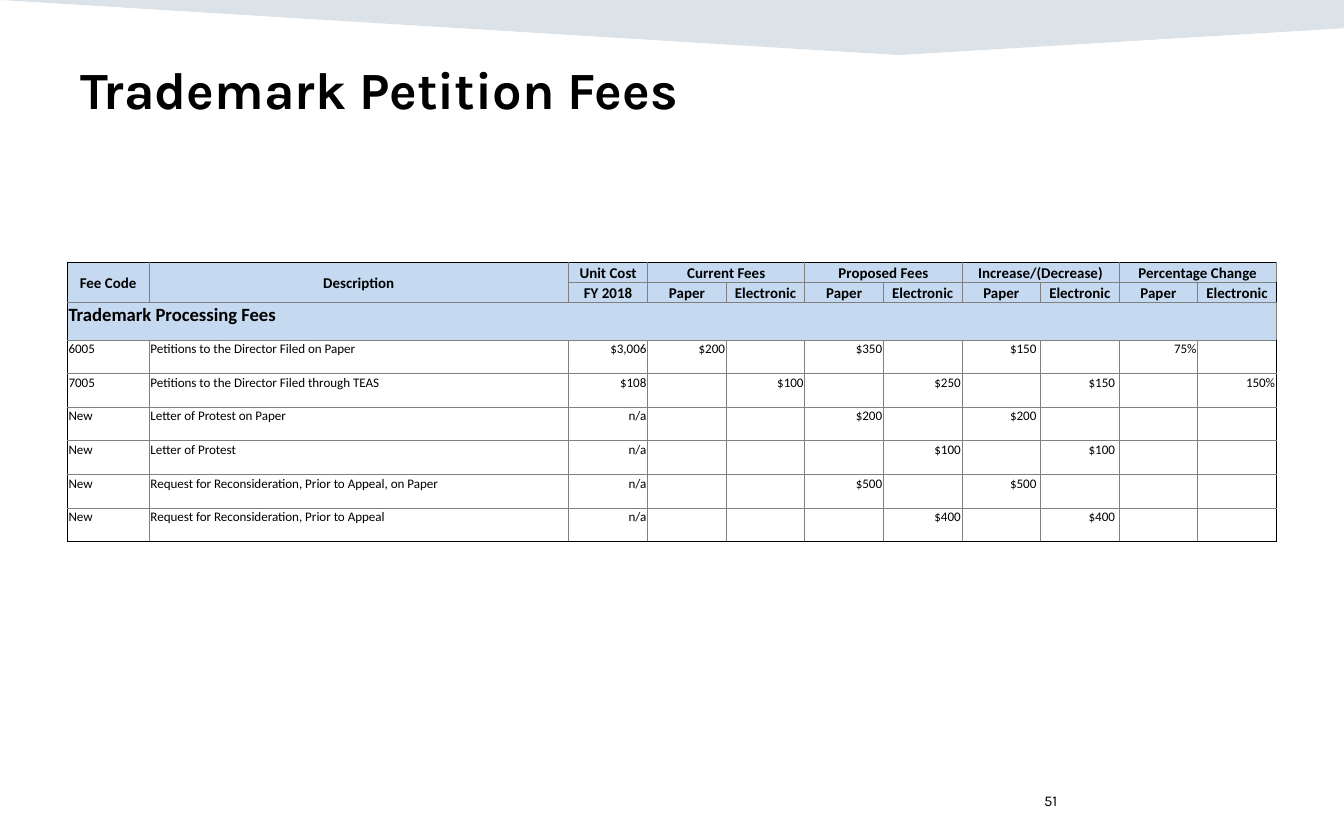
import pptx
import pptx.util
import pptx.dml.color
import pptx.enum.text
import pptx.oxml
import pptx.oxml.ns
from lxml import etree

Inches = pptx.util.Inches
Pt = pptx.util.Pt
RGBColor = pptx.dml.color.RGBColor
Align = pptx.enum.text.PP_ALIGN
Anchor = pptx.enum.text.MSO_ANCHOR
qn = pptx.oxml.ns.qn

BLACK = RGBColor(0x00, 0x00, 0x00)
GRAY = RGBColor(0x80, 0x80, 0x80)
BLUE = RGBColor(0xC5, 0xD9, 0xF1)
NAVY = RGBColor(0x16, 0x44, 0x69)

PAIR = ["Paper", "Electronic"]
GROUPS = ["Current Fees", "Proposed Fees", "Increase/(Decrease)", "Percentage Change"]
HEAD = [
    ["Fee Code", "Description", "Unit Cost"] + [t for g in GROUPS for t in (g, "")],
    ["", "", "FY 2018"] + PAIR * len(GROUPS),
    ["Trademark Processing Fees"] + [""] * 10,
]
FEES = [
    ["6005", "Petitions to the Director Filed on Paper", "$3,006",
     "$200", "", "$350", "", "$150 ", "", "75%", ""],
    ["7005", "Petitions to the Director Filed through TEAS", "$108",
     "", "$100", "", "$250", "", "$150 ", "", "150%"],
    ["New", "Letter of Protest on Paper", "n/a",
     "", "", "$200", "", "$200 ", "", "", ""],
    ["New", "Letter of Protest", "n/a",
     "", "", "", "$100", "", "$100 ", "", ""],
    ["New", "Request for Reconsideration, Prior to Appeal, on Paper", "n/a",
     "", "", "$500", "", "$500 ", "", "", ""],
    ["New", "Request for Reconsideration, Prior to Appeal", "n/a",
     "", "", "", "$400", "", "$400 ", "", ""],
]


def write(frame, text, size=7, face="Calibri", bold=False, align=Align.LEFT):
    para = frame.paragraphs[0]
    para.alignment = align
    if text:
        run = para.add_run()
        run.text = text
        run.font.size = Pt(size)
        run.font.name = face
        run.font.bold = bold
        run.font.color.rgb = BLACK
    else:
        end = etree.SubElement(para._p, qn("a:endParaRPr"))
        end.set("sz", str(size * 100))


def edge(cell, side, color):
    line = etree.SubElement(cell._tc.get_or_add_tcPr(), qn("a:ln" + side), w=str(Pt(0.5)))
    fill = etree.SubElement(line, qn("a:solidFill"))
    etree.SubElement(fill, qn("a:srgbClr"), val=str(color))


def style(cell, row, col, last):
    outer = {"L": col == 0, "R": col == 10, "T": row == 0, "B": row == last}
    for side, rim in outer.items():
        edge(cell, side, BLACK if rim else GRAY)
    cell.margin_left = cell.margin_right = cell.margin_top = Inches(0.01)
    cell.margin_bottom = 0
    if row < len(HEAD):
        cell.fill.solid()
        cell.fill.fore_color.rgb = BLUE
    else:
        cell.fill.background()


def form(row, col):
    if row < 2:
        return dict(size=8, bold=True, align=Align.CENTER)
    if row == 2:
        return dict(size=10, bold=True)
    return dict(align=Align.RIGHT if col > 1 else Align.LEFT)


def add_fees(slide):
    data = HEAD + FEES
    wide = [0.61, 3.12, 0.59]
    wide += [(9 - sum(wide)) / 8] * 8
    high = [0.15, 0.15, 0.28] + [0.25] * len(FEES)
    table = slide.shapes.add_table(len(data), len(wide), Inches(0.5), Inches(1.95),
                                   Inches(9), Inches(sum(high))).table
    table.first_row = False
    table.horz_banding = False
    for column, size in zip(table.columns, wide):
        column.width = Inches(size)
    for line, size in zip(table.rows, high):
        line.height = Inches(size)
    for row, texts in enumerate(data):
        for col, text in enumerate(texts):
            cell = table.cell(row, col)
            style(cell, row, col, len(data) - 1)
            write(cell.text_frame, text, **form(row, col))
            if row < 2:
                low = row == 1 and col > 2
                cell.vertical_anchor = Anchor.BOTTOM if low else Anchor.MIDDLE
            else:
                cell.vertical_anchor = Anchor.TOP
    for col in (0, 1):
        table.cell(0, col).merge(table.cell(1, col))
    for col in range(3, 11, 2):
        table.cell(0, col).merge(table.cell(0, col + 1))
    table.cell(2, 0).merge(table.cell(2, 10))


def add_band(slide):
    spots = [(10, 0), (10, 0.21), (6.69, 0.41)]
    path = slide.shapes.build_freeform(0, 0)
    path.add_line_segments([(Inches(x), Inches(y)) for x, y in spots], close=True)
    band = path.convert_to_shape()
    band.shadow.inherit = False
    band.line.fill.background()
    band.fill.solid()
    band.fill.fore_color.rgb = NAVY
    tint = band._element.spPr.find(qn("a:solidFill"))[0]
    etree.SubElement(tint, qn("a:alpha"), val="15000")


def add_title(slide, text):
    title = slide.shapes.title
    title.left, title.top = Inches(0.5), Inches(0.34)
    title.width, title.height = Inches(7.33), Inches(0.64)
    title.text_frame.vertical_anchor = Anchor.MIDDLE
    write(title.text_frame, text, size=28, face="Karla", bold=True)


def add_page(slide, text):
    box = slide.shapes.add_textbox(Inches(7.67), Inches(5.79), Inches(2.33), Inches(0.33))
    box.text_frame.word_wrap = True
    box.text_frame.vertical_anchor = Anchor.MIDDLE
    write(box.text_frame, text, size=8, face="Karla")


def main():
    deck = pptx.Presentation()
    deck.slide_width, deck.slide_height = Inches(10), Inches(6.25)
    slide = deck.slides.add_slide(deck.slide_layouts[5])
    add_band(slide)
    add_title(slide, "Trademark Petition Fees")
    add_page(slide, "51")
    add_fees(slide)
    deck.save("out.pptx")


if __name__ == "__main__":
    main()
